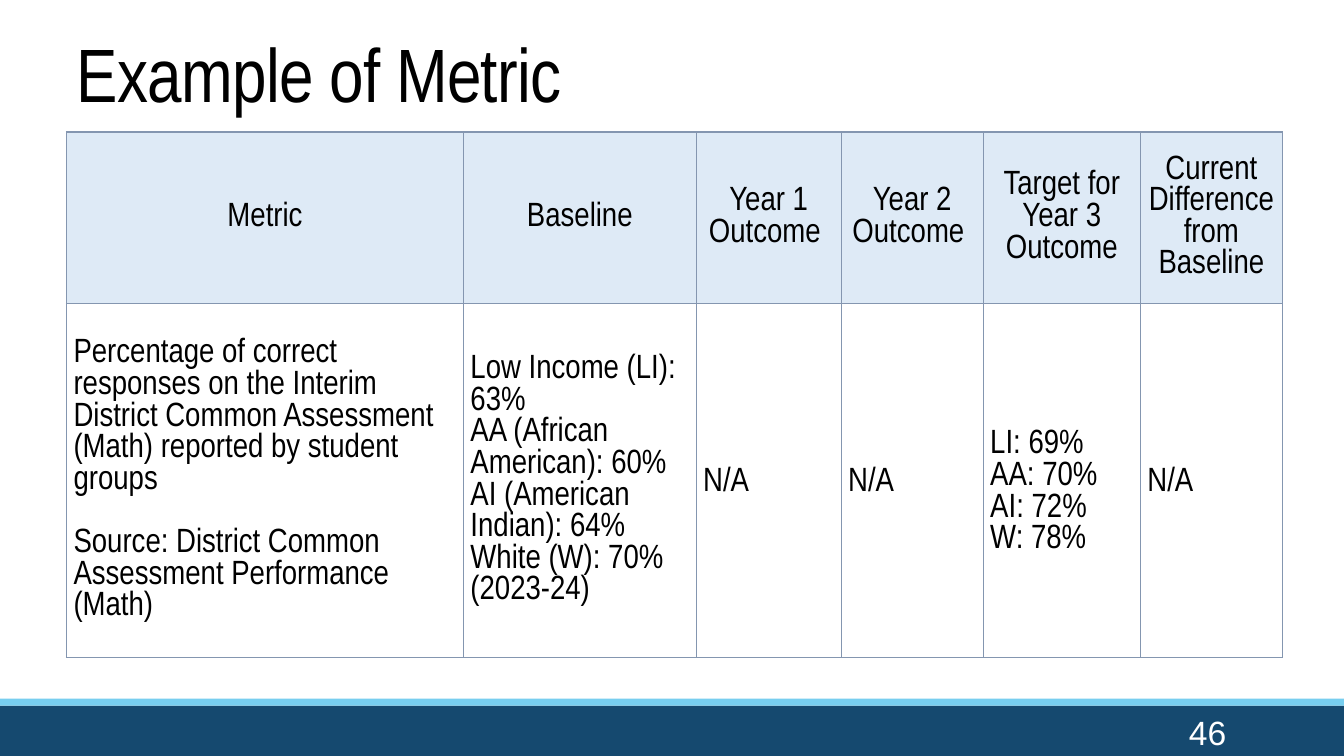
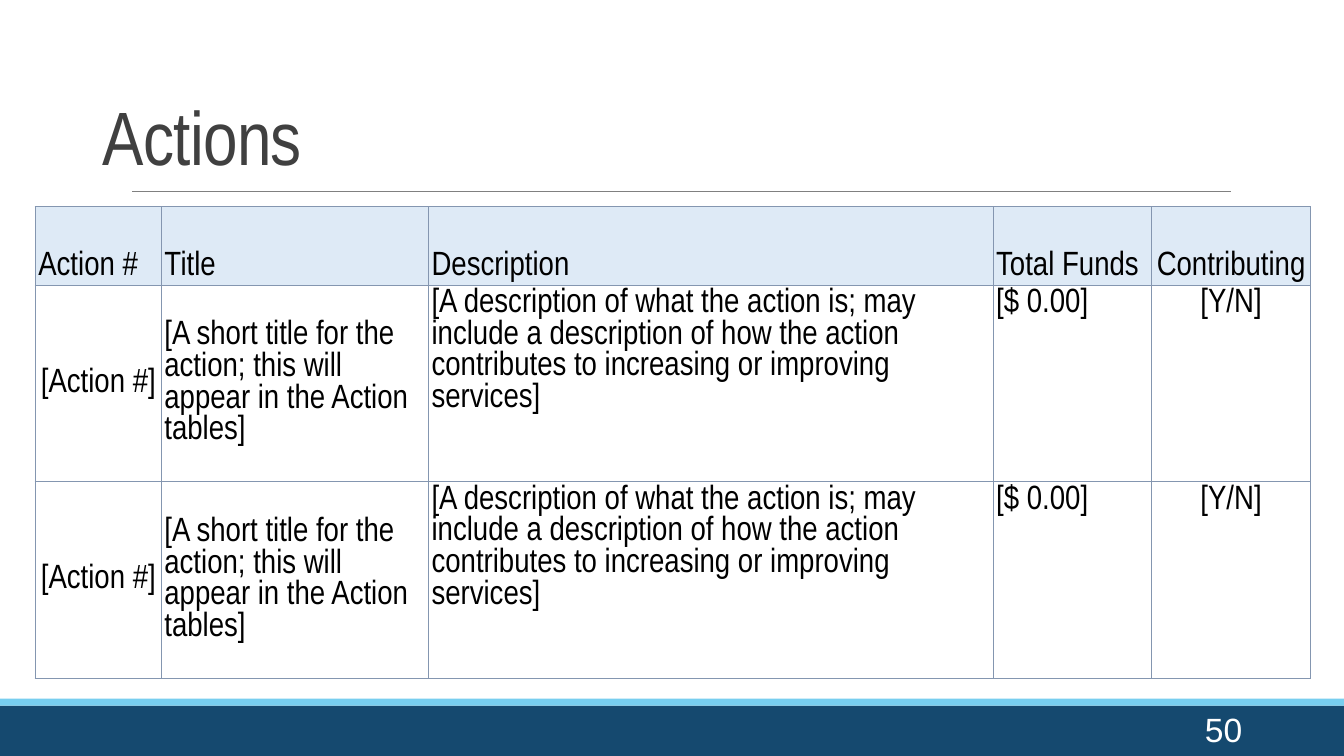
import dataclasses

import pptx
import pptx.dml.color
import pptx.enum.shapes
import pptx.enum.text
import pptx.oxml.ns
import pptx.util
from lxml import etree

ANCHOR = pptx.enum.text.MSO_ANCHOR
ALIGN = pptx.enum.text.PP_ALIGN
qn = pptx.oxml.ns.qn


@dataclasses.dataclass(frozen=True)
class Theme:
    width: float = 13.33
    height: float = 7.5
    band: str = "15496F"
    stripe: str = "77CEEF"
    rule: str = "808080"
    border: str = "8496B0"
    header: str = "DEEAF6"
    white: str = "FFFFFF"
    black: str = "000000"
    grey: str = "404040"
    font: str = "Arial Narrow"
    number_font: str = "Arial"
    title_size: int = 54
    body_size: int = 24
    rule_width: float = 0.5
    border_width: float = 1


@dataclasses.dataclass(frozen=True)
class Box:
    """A region in percent of the slide's width and height."""
    x: float
    y: float
    w: float
    h: float

    def emu(self):
        across = pptx.util.Inches(T.width) / 100
        down = pptx.util.Inches(T.height) / 100
        return [round(v) for v in (self.x * across, self.y * down,
                                   self.w * across, self.h * down)]


T = Theme()
BAND = Box(0, 93.33, 100, 6.67)
STRIPE = Box(0, 92.4, 100, 0.93)
RULE = Box(9.83, 25.33, 81.77, 0)


def rgb(color):
    return pptx.dml.color.RGBColor.from_string(color)


def write(tf, text, size=T.body_size, font=T.font, color=T.black,
          align=ALIGN.LEFT, line=1.0, before=0, after=0, tracking=None):
    """Write one paragraph per line of text; before applies between them."""
    tf.word_wrap = True
    for i, words in enumerate(text.split("\n")):
        p = tf.paragraphs[0] if i == 0 else tf.add_paragraph()
        p.alignment = align
        p.line_spacing = line
        p.space_before = pptx.util.Pt(before if i else 0)
        p.space_after = pptx.util.Pt(after)
        r = p.add_run()
        r.text = words
        r.font.size = pptx.util.Pt(size)
        r.font.name = font
        r.font.color.rgb = rgb(color)
        if tracking is not None:
            r.font._element.set("spc", str(round(tracking * 100)))


# Shared parts of every slide
def add_band(slide, box, color):
    sp = slide.shapes.add_shape(pptx.enum.shapes.MSO_SHAPE.RECTANGLE, *box.emu())
    sp.shadow.inherit = False
    sp.fill.solid()
    sp.fill.fore_color.rgb = rgb(color)
    sp.line.fill.background()


def add_rule(slide, box):
    x, y, w, h = box.emu()
    line = slide.shapes.add_connector(
        pptx.enum.shapes.MSO_CONNECTOR.STRAIGHT, x, y, x + w, y + h)
    line.line.color.rgb = rgb(T.rule)
    line.line.width = pptx.util.Pt(T.rule_width)
    etree.SubElement(line._element.spPr, qn("a:effectLst"))


def add_title(slide, box, text, color):
    sp = slide.shapes.title
    sp.left, sp.top, sp.width, sp.height = box.emu()
    tf = sp.text_frame
    tf.auto_size = pptx.enum.text.MSO_AUTO_SIZE.NONE
    tf.vertical_anchor = ANCHOR.BOTTOM
    write(tf, text, size=T.title_size, color=color, line=0.85, tracking=-0.5)


def add_number(slide, box, number):
    tf = slide.shapes.add_textbox(*box.emu()).text_frame
    tf.vertical_anchor = ANCHOR.MIDDLE
    write(tf, str(number), font=T.number_font, color=T.white, align=ALIGN.RIGHT)


def add_frame(prs, title, title_box, color, number, number_box):
    slide = prs.slides.add_slide(prs.slide_layouts[5])
    add_band(slide, BAND, T.band)
    add_band(slide, STRIPE, T.stripe)
    add_rule(slide, RULE)
    add_title(slide, title_box, title, color)
    add_number(slide, number_box, number)
    return slide


# Tables
def set_borders(cell):
    tcPr = cell._tc.get_or_add_tcPr()
    for side in ("lnL", "lnR", "lnT", "lnB"):
        ln = etree.SubElement(tcPr, qn("a:" + side),
                              w=str(pptx.util.Pt(T.border_width)))
        fill = etree.SubElement(ln, qn("a:solidFill"))
        etree.SubElement(fill, qn("a:srgbClr"), val=T.border)


def add_grid(slide, box, columns, rows, cells, style):
    """Share the box among column and row weights; style(row, col) formats."""
    x, y, w, h = box.emu()
    table = slide.shapes.add_table(len(rows), len(columns), x, y, w, h).table
    table.first_row = table.horz_banding = False
    for col, weight in zip(table.columns, columns):
        col.width = round(w * weight / sum(columns))
    for row, weight in zip(table.rows, rows):
        row.height = round(h * weight / sum(rows))
    for i, texts in enumerate(cells):
        for j, text in enumerate(texts):
            cell = table.cell(i, j)
            set_borders(cell)
            cell.fill.solid()
            cell.fill.fore_color.rgb = rgb(T.white if i else T.header)
            anchor, (side, top, bottom), fmt = style(i, j)
            cell.vertical_anchor = anchor
            cell.margin_left = cell.margin_right = pptx.util.Inches(side)
            cell.margin_top = pptx.util.Inches(top)
            cell.margin_bottom = pptx.util.Inches(bottom)
            write(cell.text_frame, text, **fmt)


def metric_style(row, col):
    target = row == 1 and col == 4
    if row == 0:
        fmt = {"align": ALIGN.CENTER}
    elif col == 0:
        fmt = {"before": 22.6}
    else:
        fmt = {"line": 1.0 if col == 1 or target else 1.15}
    return ANCHOR.MIDDLE, (0.07, 0.24 if target else 0, 0), fmt


def action_style(row, col):
    if row == 0:
        anchor = ANCHOR.BOTTOM
    else:
        anchor = ANCHOR.MIDDLE if col < 2 else ANCHOR.TOP
    centred = col == 4 or (row > 0 and col == 0)
    align = ALIGN.CENTER if centred else ALIGN.LEFT
    return anchor, (0.03, 0.03, 0.03), {"align": align, "after": 6}


# Slides
def metric_slide(prs):
    slide = add_frame(prs, "Example of Metric", Box(4.95, 4.13, 90.47, 12.13),
                      T.black, 46, Box(81.25, 94.13, 10.73, 5.33))
    cells = [
        ["Metric", "Baseline", "Year 1 Outcome ", "Year 2 Outcome ",
         "Target for Year 3 Outcome", "Current Difference from Baseline"],
        ["Percentage of correct responses on the Interim District Common "
         "Assessment (Math) reported by student groups\n"
         "Source: District Common Assessment Performance (Math)",
         "Low Income (LI): 63%\nAA (African American): 60%\n"
         "AI (American Indian): 64%\nWhite (W): 70%\n(2023-24)",
         "N/A", "N/A", "LI: 69%\nAA: 70%\nAI: 72%\nW: 78%", "N/A"],
    ]
    add_grid(slide, Box(4.95, 17.47, 90.47, 67.07),
             [3.94, 2.31, 1.44, 1.41, 1.56, 1.41], [1.7, 3.33],
             cells, metric_style)


def actions_slide(prs):
    slide = add_frame(prs, "Actions", Box(6.9, 5.33, 86.27, 19.33),
                      T.grey, 50, Box(70.67, 93.73, 22.5, 5.33))
    header = ["Action #", "Title", "Description", "Total Funds", "Contributing"]
    action = ["[Action #]",
              "[A short title for the action; this will appear in the Action tables]",
              "[A description of what the action is; may include a description of "
              "how the action contributes to increasing or improving services]",
              "[$ 0.00]", "[Y/N]"]
    add_grid(slide, Box(2.63, 27.33, 94.9, 62.4),
             [1.25, 2.65, 5.6, 1.57, 1.58], [0.78, 1.95, 1.95],
             [header, action, action], action_style)


def main():
    prs = pptx.Presentation()
    prs.slide_width = pptx.util.Inches(T.width)
    prs.slide_height = pptx.util.Inches(T.height)
    metric_slide(prs)
    actions_slide(prs)
    prs.save("out.pptx")


if __name__ == "__main__":
    main()
